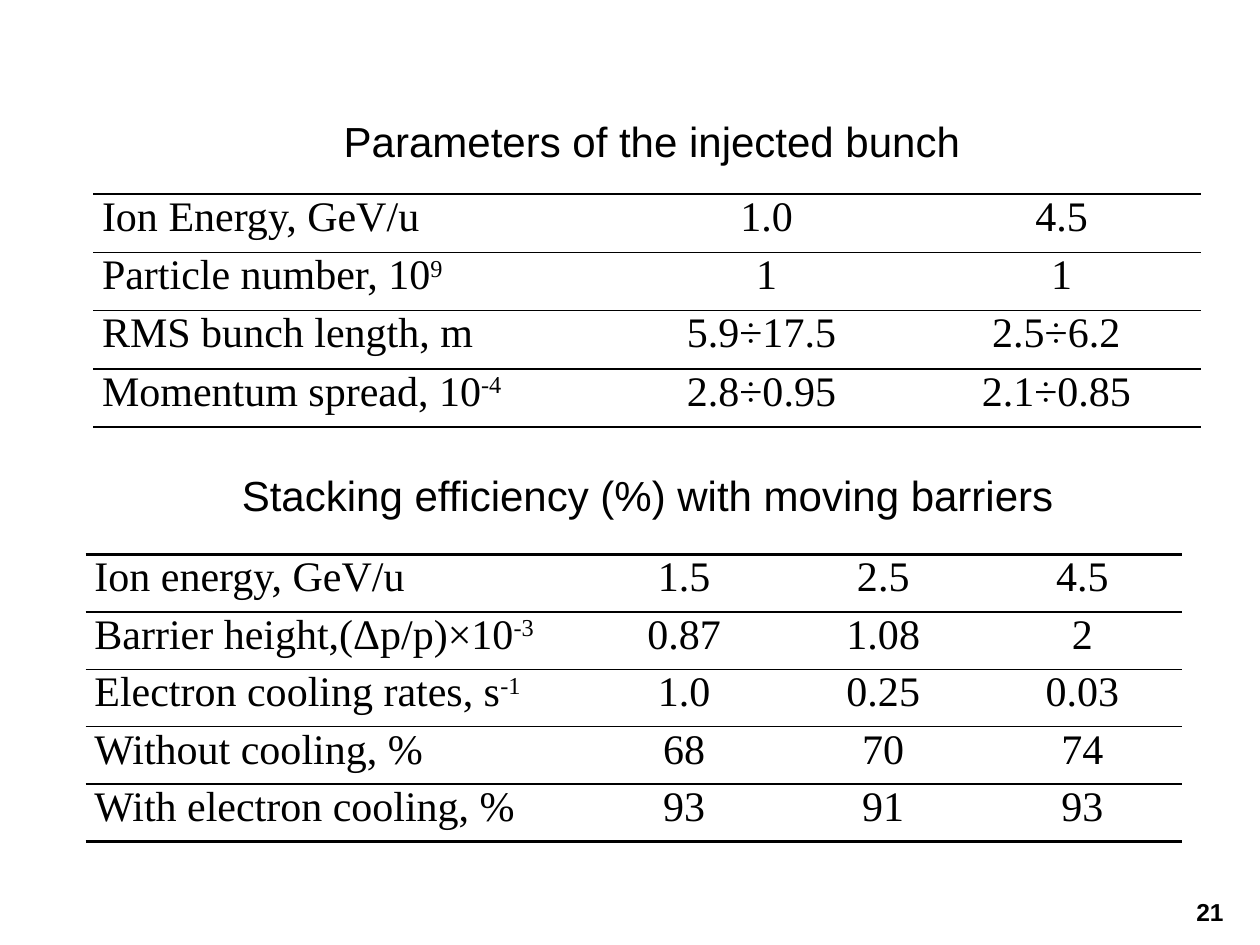
"""Build a slide with the injected bunch parameters and the stacking efficiency."""
from lxml import etree
from pptx import Presentation
from pptx import util as u
from pptx.dml.color import RGBColor
from pptx.enum import text
from pptx.oxml.ns import qn

THEME = {
    "ink": "000000",
    "heading": ("Arial", 24, False),
    "body": ("Times New Roman", 24, False),
    "number": ("Arial", 14, True),
    "outer_rule": 1.5,
    "inner_rule": 1,
}
LEFT, CENTER, RIGHT = text.PP_ALIGN.LEFT, text.PP_ALIGN.CENTER, text.PP_ALIGN.RIGHT
GROW, FIXED = text.MSO_AUTO_SIZE.SHAPE_TO_FIT_TEXT, text.MSO_AUTO_SIZE.NONE

LABELS = [
    ("Stacking efficiency (%) with moving barriers",
     (0.91, 3.68, 8.46, 0.51), "heading", CENTER, True, GROW),
    ("Parameters of the injected bunch",
     (2.63, 0.87, 5.14, 0.5), "heading", LEFT, False, GROW),
    ("21", (7.48, 7.07, 2.33, 0.43), "number", RIGHT, True, FIXED),
]
TABLES = [
    {
        "at": (0.68, 4.4),
        "cols": [3.96, 1.58, 1.58, 1.58],
        "height": 2.28,
        "rows": [
            ("Ion energy, GeV/u", "1.5", "2.5", "4.5"),
            ("Barrier height,(Δp/p)×10^-3", "0.87", "1.08", "2"),
            ("Electron cooling rates, s^-1", "1.0", "0.25", "0.03"),
            ("Without cooling, %", "68", "70", "74"),
            ("With electron cooling, %", "93", "91", "93"),
        ],
    },
    {
        "at": (0.74, 1.54),
        "cols": [4.11, 2.47, 2.21],
        "height": 1.85,
        "rows": [
            ("Ion Energy, GeV/u", "1.0", "4.5"),
            ("Particle number, 10^9", "1", "1"),
            ("RMS bunch length, m", "5.9÷17.5 ", "2.5÷6.2 "),
            ("Momentum spread, 10^-4", "2.8÷0.95 ", "2.1÷0.85 "),
        ],
    },
]


def write(p, words, style, align):
    base, _, power = words.partition("^")
    p.text = base
    p.alignment = align
    if power:
        r = p.add_run()
        r.text = power
        r._r.get_or_add_rPr().set("baseline", "30000")
    name, size, bold = THEME[style]
    for r in p.runs:
        r.font.name, r.font.size, r.font.bold = name, u.Pt(size), bold
        r.font.color.rgb = RGBColor.from_string(THEME["ink"])


def add_label(slide, words, box, style, align, wrap, fit):
    tf = slide.shapes.add_textbox(*map(u.Inches, box)).text_frame
    tf.word_wrap = wrap
    tf.auto_size = fit
    write(tf.paragraphs[0], words, style, align)


def set_rules(cell, top, bottom):
    props = cell._tc.get_or_add_tcPr()
    for side, width in (("L", 0), ("R", 0), ("T", top), ("B", bottom)):
        line = etree.SubElement(props, qn(f"a:ln{side}"), w=str(u.Pt(width)))
        if width:
            fill = etree.SubElement(line, qn("a:solidFill"))
            etree.SubElement(fill, qn("a:srgbClr"), val=THEME["ink"])
        else:
            etree.SubElement(line, qn("a:noFill"))


def add_table(slide, at, cols, height, rows):
    size = (sum(cols), height)
    frame = slide.shapes.add_table(len(rows), len(cols), *map(u.Inches, at + size))
    table = frame.table
    table.first_row = table.horz_banding = False
    for col, width in zip(table.columns, cols):
        col.width = u.Inches(width)
    outer, inner = THEME["outer_rule"], THEME["inner_rule"]
    for i, row in enumerate(rows):
        for j, words in enumerate(row):
            cell = table.cell(i, j)
            cell.margin_left = cell.margin_right = u.Inches(0.07)
            cell.margin_top = cell.margin_bottom = 0
            p = cell.text_frame.paragraphs[0]
            write(p, words, "body", CENTER if j else LEFT)
            p.space_after = u.Pt(3)
            set_rules(cell, inner if i else outer,
                      outer if i == len(rows) - 1 else inner)
            cell.fill.background()


def main():
    prs = Presentation()
    prs.slide_width, prs.slide_height = u.Inches(10), u.Inches(7.5)
    slide = prs.slides.add_slide(prs.slide_layouts[6])
    for table in TABLES:
        add_table(slide, **table)
    for label in LABELS:
        add_label(slide, *label)
    prs.save("out.pptx")


if __name__ == "__main__":
    main()
